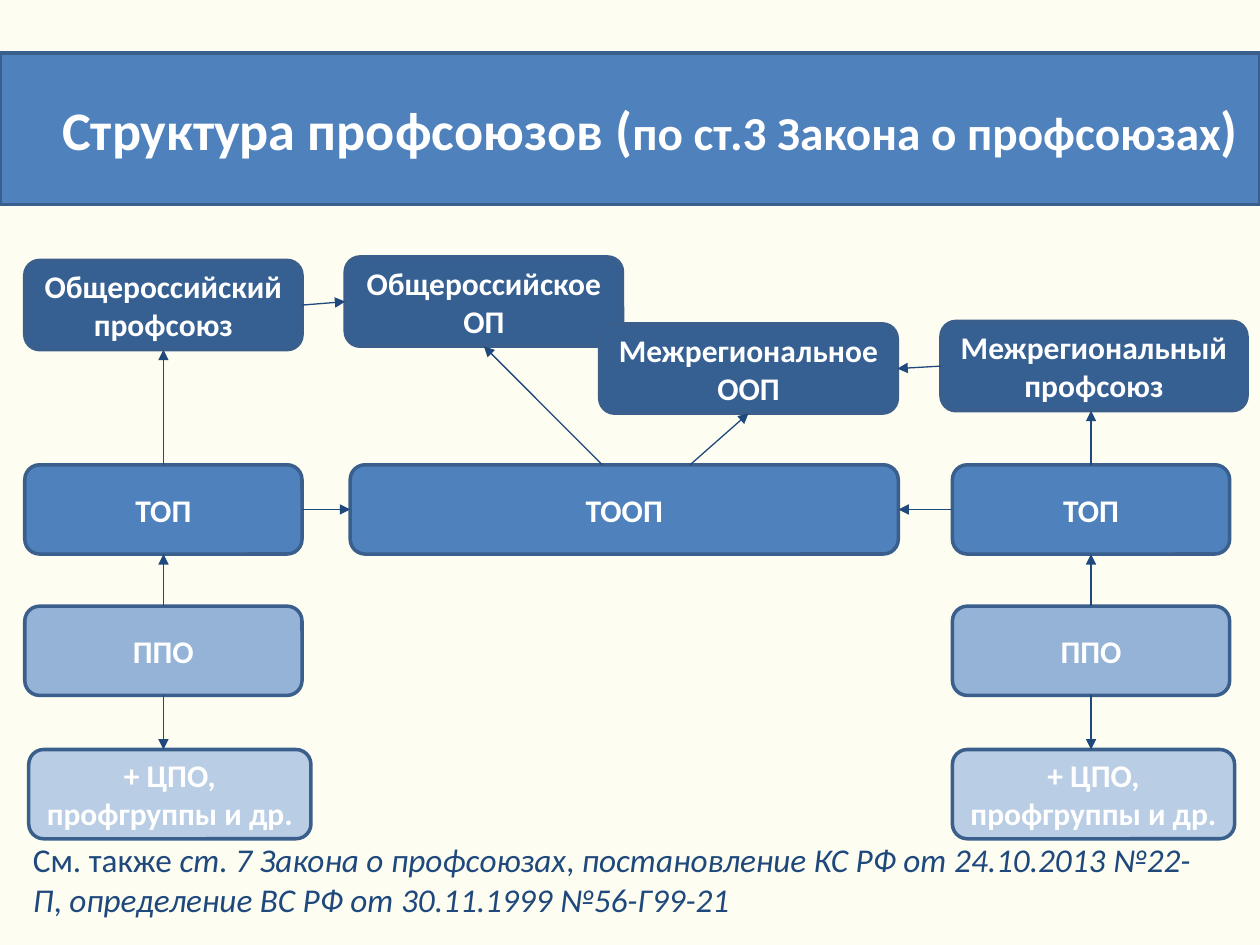
from dataclasses import dataclass

from lxml.etree import SubElement
from pptx import Presentation
from pptx.dml.color import RGBColor
from pptx.enum.shapes import MSO_CONNECTOR as Link, MSO_SHAPE as Form
from pptx.enum.text import MSO_ANCHOR as Anchor, MSO_AUTO_SIZE as AutoSize, PP_ALIGN as Align
from pptx.oxml.ns import qn
from pptx.util import Cm, Pt


@dataclass(frozen=True)
class Theme:
    """Colours, type sizes and line widths of the slide."""
    font: str = "Calibri"
    paper: str = "FDFDF1"
    ink: str = "1F497D"
    white: str = "FFFFFF"
    border: str = "3A5F8C"
    union: str = "376092"
    regional: str = "4F81BD"
    primary: str = "95B3D7"
    group: str = "B9CDE5"
    title_size: float = 31
    subtitle_size: float = 27
    card_size: float = 18
    note_size: float = 19
    border_width: float = 2
    arrow_width: float = 0.75


@dataclass(frozen=True)
class Box:
    """A rectangle in centimetres."""
    left: float
    top: float
    width: float
    height: float

    def within(self, left, top, width, height):
        """Return a box placed relative to this one."""
        return Box(self.left + left, self.top + top, width, height)

    def point(self, across, down):
        """Return the point at the given fractions of this box."""
        return self.left + across * self.width, self.top + down * self.height


THEME = Theme()
CARD_WIDTH, CARD_HEIGHT = 5.59, 1.8
TOP_MID, BOTTOM_MID, LEFT_MID, RIGHT_MID = (0.5, 0), (0.5, 1), (0, 0.5), (1, 0.5)


def colour(value):
    """Turn a hex value into a colour."""
    return RGBColor.from_string(value)


def place(shape, box):
    """Move and size a shape to its box."""
    shape.left, shape.top = Cm(box.left), Cm(box.top)
    shape.width, shape.height = Cm(box.width), Cm(box.height)


def paint(shape, fill):
    """Fill and outline a shape."""
    shape.fill.solid()
    shape.fill.fore_color.rgb = colour(fill)
    shape.line.color.rgb = colour(THEME.border)
    shape.line.width = Pt(THEME.border_width)


def add_span(para, text, size, tint, bold=False, italic=False):
    """Add one run of text to a paragraph."""
    span = para.add_run()
    span.text = text
    span.font.name = THEME.font
    span.font.size = Pt(size)
    span.font.bold, span.font.italic = bold, italic
    span.font.color.rgb = colour(tint)


def add_card(page, box, text, fill):
    """Draw one rounded card and return its box."""
    card = page.shapes.add_shape(
        Form.ROUNDED_RECTANGLE, Cm(box.left), Cm(box.top), Cm(box.width), Cm(box.height))
    card.shadow.inherit = False
    paint(card, fill)
    frame = card.text_frame
    frame.word_wrap = True
    frame.vertical_anchor = Anchor.MIDDLE
    para = frame.paragraphs[0]
    para.alignment = Align.CENTER
    add_span(para, text, THEME.card_size, THEME.white, bold=True)
    return box


def add_arrow(page, start, end):
    """Draw an arrow between two points."""
    arrow = page.shapes.add_connector(Link.STRAIGHT, *map(Cm, (*start, *end)))
    arrow.line.color.rgb = colour(THEME.ink)
    arrow.line.width = Pt(THEME.arrow_width)
    properties = arrow.element.find(qn("p:spPr"))
    SubElement(properties.find(qn("a:ln")), qn("a:tailEnd"), type="triangle")
    SubElement(properties, qn("a:effectLst"))


def add_banner(page, box):
    """Format the title placeholder as the banner."""
    title = page.shapes.title
    place(title, box)
    paint(title, THEME.regional)
    frame = title.text_frame
    frame.auto_size = AutoSize.NONE
    frame.vertical_anchor = Anchor.MIDDLE
    para = frame.paragraphs[0]
    para.alignment = Align.LEFT
    para._p.get_or_add_pPr().set("indent", str(Cm(1)))
    for text, size in (
        ("Структура профсоюзов (", THEME.title_size),
        ("по ст.3 Закона о профсоюзах", THEME.subtitle_size),
        (")", THEME.title_size),
    ):
        add_span(para, text, size, THEME.white, bold=True)


def add_note(page, box):
    """Format the body placeholder as the legal note."""
    body = page.placeholders[1]
    place(body, box)
    frame = body.text_frame
    frame.auto_size = AutoSize.NONE
    para = frame.paragraphs[0]
    para.space_before = Pt(0)
    settings = para._p.get_or_add_pPr()
    settings.set("marL", "0")
    settings.set("indent", "0")
    SubElement(settings, qn("a:buNone"))
    for text, italic in (
        ("См. также ", False),
        ("ст. 7 Закона о профсоюзах", True),
        (", ", False),
        ("постановление КС РФ от 24.10.2013 №22-П", True),
        (", ", False),
        ("определение ВС РФ от 30.11.1999 №56-Г99-21", True),
    ):
        add_span(para, text, THEME.note_size, THEME.ink, italic=italic)


def add_branch(page, box, union_text, union_box, group_shift):
    """Draw a union above its stack of organisations; return the top two cards."""
    union = add_card(page, union_box, union_text, THEME.union)
    regional = add_card(page, box.within(0, 0, CARD_WIDTH, CARD_HEIGHT), "ТОП", THEME.regional)
    primary = add_card(page, box.within(0, 2.85, CARD_WIDTH, CARD_HEIGHT), "ППО", THEME.primary)
    group = add_card(page, box.within(group_shift, 5.74, 5.69, CARD_HEIGHT),
                     "+ ЦПО, профгруппы и др.", THEME.group)
    axis = regional.point(*TOP_MID)[0]
    for start, end in (
        (regional.top, union.top + union.height),
        (primary.top, regional.top + regional.height),
        (primary.top + primary.height, group.top),
    ):
        add_arrow(page, (axis, start), (axis, end))
    return union, regional


def add_associations(page, box):
    """Draw the associations of unions and return their cards."""
    national = add_card(page, box.within(0, 0, CARD_WIDTH, CARD_HEIGHT),
                        "Общероссийское ОП", THEME.union)
    interregional = add_card(page, box.within(5.13, 1.35, 6, CARD_HEIGHT),
                             "Межрегиональное ООП", THEME.union)
    territorial = add_card(page, box.within(0.1, 4.19, 11.05, CARD_HEIGHT),
                           "ТООП", THEME.regional)
    add_arrow(page, territorial.point(0.46, 0), national.point(*BOTTOM_MID))
    add_arrow(page, territorial.point(0.62, 0), interregional.point(*BOTTOM_MID))
    return national, interregional, territorial


def build_structure(page):
    """Lay out the whole slide."""
    add_banner(page, Box(0, 1.07, 25.4, 3.05))
    add_note(page, Box(0.41, 16.8, 24.4, 2.1))
    left_union, left_regional = add_branch(
        page, Box(0.5, 9.37, 5.69, 7.54), "Общероссийский профсоюз",
        Box(0.5, 5.25, CARD_WIDTH, CARD_HEIGHT), 0.08)
    right_union, right_regional = add_branch(
        page, Box(19.2, 9.37, 5.69, 7.54), "Межрегиональный профсоюз",
        Box(18.97, 6.48, 6.17, CARD_HEIGHT), 0)
    national, interregional, territorial = add_associations(page, Box(6.96, 5.18, 11.15, 5.99))
    for source, target in ((left_union, national), (left_regional, territorial)):
        add_arrow(page, source.point(*RIGHT_MID), target.point(*LEFT_MID))
    for source, target in ((right_union, interregional), (right_regional, territorial)):
        add_arrow(page, source.point(*LEFT_MID), target.point(*RIGHT_MID))


def main():
    """Build and save the deck."""
    deck = Presentation()
    deck.slide_width, deck.slide_height = Cm(25.4), Cm(19.05)
    page = deck.slides.add_slide(deck.slide_layouts[1])
    page.background.fill.solid()
    page.background.fill.fore_color.rgb = colour(THEME.paper)
    build_structure(page)
    deck.save("out.pptx")


if __name__ == "__main__":
    main()
